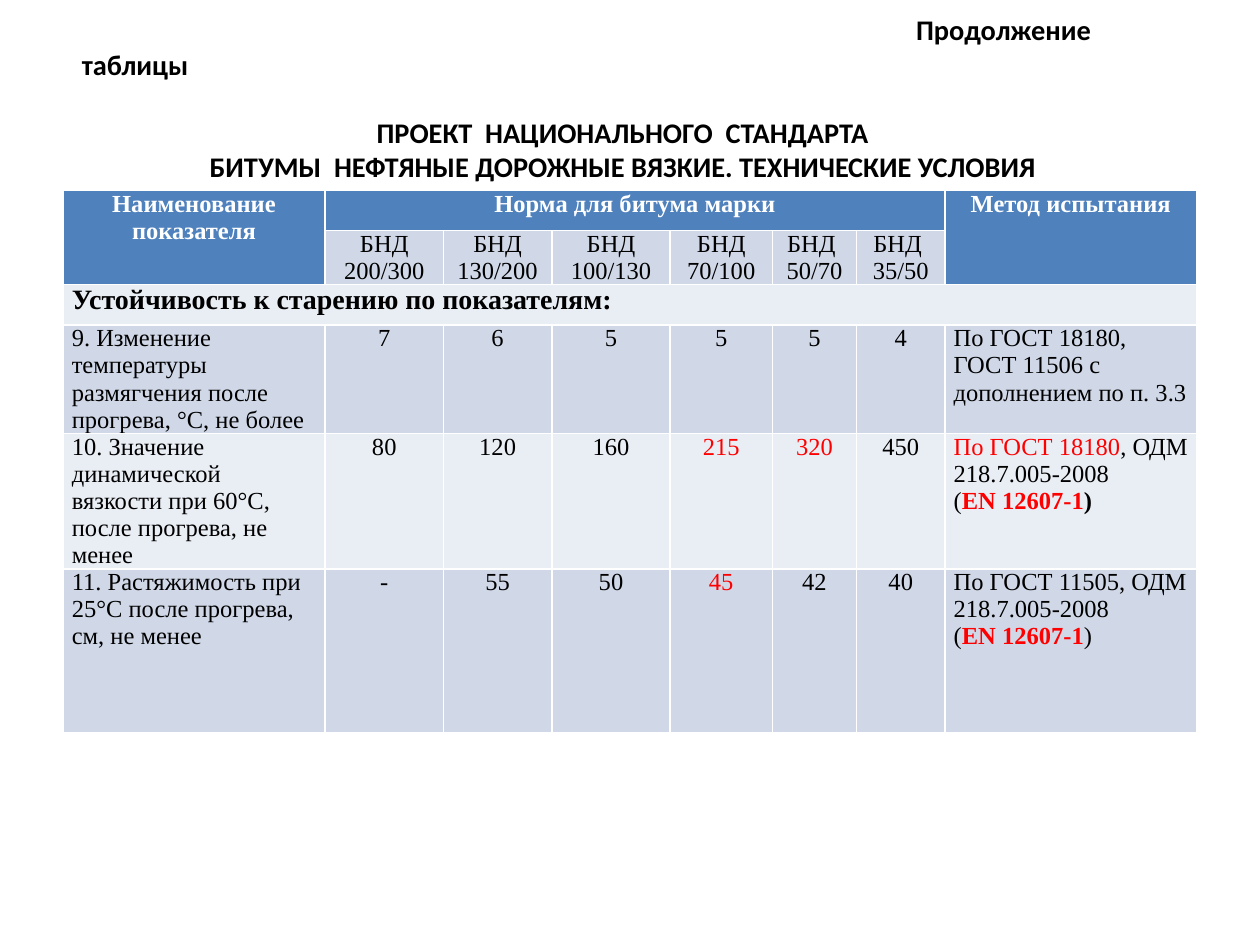
from pptx import Presentation
from pptx.dml.color import RGBColor
from pptx.enum import text
from pptx.util import Inches, Pt

BLACK, WHITE, RED = "000000", "FFFFFF", "FF0000"
HEADER, DARK_BAND, LIGHT_BAND = "4F81BD", "D0D8E8", "E9EDF4"
COLUMN_WIDTHS = [2.08, 0.94, 0.86, 0.94, 0.81, 0.67, 0.7, 2]
ROW_HEIGHTS = [0.32, 0.41, 0.32, 0.83, 1.03, 1.3]
ROW_FILLS = [HEADER, DARK_BAND, LIGHT_BAND, DARK_BAND, LIGHT_BAND, DARK_BAND]
GRADES = ["БНД 200/300", "БНД 130/200", "БНД 100/130", "БНД 70/100",
          "БНД \n50/70", "БНД \n35/50"]
INDICATORS = [
    ("9. Изменение температуры размягчения после прогрева, °С, не более",
     ["7", "6", "5", "5", "5", "4"],
     [[("По ГОСТ 18180, ГОСТ 11506 с дополнением по п. 3.3", BLACK, False)]]),
    ("10. Значение динамической вязкости при 60°С, после прогрева, не менее",
     ["80", "120", "160", "215", "320", "450"],
     [[("По ГОСТ 18180", RED, False), (", ОДМ 218.7.005-2008", BLACK, False)],
      [("(", BLACK, False), ("EN 12607-1", RED, True), (")", BLACK, True)]]),
    ("11. Растяжимость при 25°С после прогрева, см, не менее",
     ["-", "55", "50", "45", "42", "40"],
     [[("По ГОСТ 11505, ОДМ 218.7.005-2008", BLACK, False)],
      [("(", BLACK, False), ("EN 12607-1", RED, True), (")", BLACK, False)]]),
]
REVISED_VALUES = {"215", "320", "45"}


def rgb(value):
    return RGBColor.from_string(value)


def style_run(run, font, size, color, bold):
    run.font.name = font
    run.font.size = Pt(size)
    run.font.bold = bold
    run.font.color.rgb = rgb(color)


def add_heading(slide):
    heading = slide.shapes.title
    heading.left, heading.top = Inches(0.55), Inches(0)
    heading.width, heading.height = Inches(9), Inches(1.25)
    frame = heading.text_frame
    frame.text = ("Продолжение таблицы\n"
                  "ПРОЕКТ  НАЦИОНАЛЬНОГО  СТАНДАРТА\n"
                  "БИТУМЫ  НЕФТЯНЫЕ ДОРОЖНЫЕ ВЯЗКИЕ. ТЕХНИЧЕСКИЕ УСЛОВИЯ")
    frame.word_wrap = True
    frame.auto_size = text.MSO_AUTO_SIZE.NONE
    frame.vertical_anchor = text.MSO_ANCHOR.TOP
    frame.margin_left = frame.margin_top = Inches(0.1)
    frame.margin_right = Inches(0.32)
    for paragraph in frame.paragraphs:
        paragraph.alignment = text.PP_ALIGN.CENTER
        style_run(paragraph.runs[0], "Calibri", 16.2, BLACK, True)
    continuation, project, _ = frame.paragraphs
    continuation.alignment = text.PP_ALIGN.LEFT
    indents = continuation._p.get_or_add_pPr()
    indents.set("marL", "0")
    indents.set("indent", str(Inches(6.62)))
    project.space_before = Pt(19.5)


def fill_cell(cell, lines, centered=False, size=14):
    frame = cell.text_frame
    for index, line in enumerate(lines):
        paragraph = frame.add_paragraph() if index else frame.paragraphs[0]
        paragraph.alignment = text.PP_ALIGN.CENTER if centered else text.PP_ALIGN.LEFT
        for content, color, bold in line:
            run = paragraph.add_run()
            run.text = content
            style_run(run, "Times New Roman", size, color, bold)


def write_cell(cell, content, color=BLACK, bold=False, centered=False, size=14):
    lines = [[(line, color, bold)] for line in content.split("\n")]
    fill_cell(cell, lines, centered, size)


def add_bitumen_table(slide):
    table = slide.shapes.add_table(
        len(ROW_HEIGHTS), len(COLUMN_WIDTHS),
        Inches(0.5), Inches(1.51), Inches(9), Inches(4.51)).table
    for column, width in zip(table.columns, COLUMN_WIDTHS):
        column.width = Inches(width)
    for row, height, fill in zip(table.rows, ROW_HEIGHTS, ROW_FILLS):
        row.height = Inches(height)
        for cell in row.cells:
            cell.fill.solid()
            cell.fill.fore_color.rgb = rgb(fill)
            cell.margin_left = cell.margin_right = Inches(0.07)
            cell.margin_top = cell.margin_bottom = 0
    for start, end in [((0, 0), (1, 0)), ((0, 1), (0, 6)),
                       ((0, 7), (1, 7)), ((2, 0), (2, 7))]:
        table.cell(*start).merge(table.cell(*end))

    for column, label in [(0, "Наименование показателя"),
                          (1, "Норма для битума марки"),
                          (7, "Метод испытания")]:
        write_cell(table.cell(0, column), label, WHITE, True, True)
    for column, grade in enumerate(GRADES, 1):
        write_cell(table.cell(1, column), grade, centered=True)
    write_cell(table.cell(2, 0), "Устойчивость к старению по показателям:",
               bold=True, size=16)
    for row, (indicator, norms, method) in enumerate(INDICATORS, 3):
        write_cell(table.cell(row, 0), indicator)
        for column, norm in enumerate(norms, 1):
            color = RED if norm in REVISED_VALUES else BLACK
            write_cell(table.cell(row, column), norm, color, centered=True)
        fill_cell(table.cell(row, 7), method)


def main():
    presentation = Presentation()
    presentation.slide_width = Inches(10)
    presentation.slide_height = Inches(7.5)
    slide = presentation.slides.add_slide(presentation.slide_layouts[5])
    add_heading(slide)
    add_bitumen_table(slide)
    presentation.save("out.pptx")


if __name__ == "__main__":
    main()
